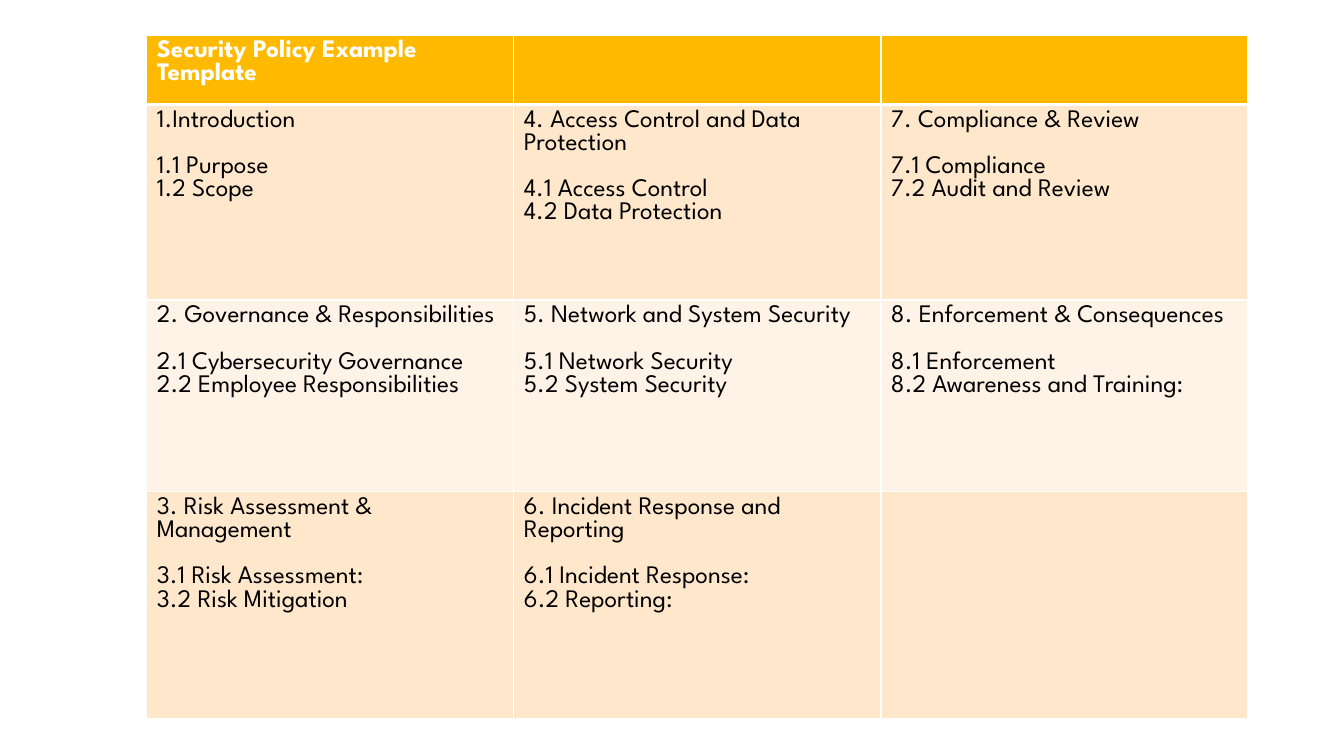
from dataclasses import dataclass

from lxml.etree import SubElement
from pptx import Presentation
from pptx.dml.color import RGBColor
from pptx.oxml.ns import qn
from pptx.util import Cm, Pt


@dataclass(frozen=True)
class Theme:
    font: str = "League Spartan"
    text_size: float = 18
    section_gap: float = 16.5
    thin_border: float = 1
    header_border: float = 3
    white: str = "FFFFFF"
    black: str = "000000"
    header_fill: str = "FFBA00"
    band_fills: tuple = ("FFE7CC", "FFF3E7")


TITLE = "Security Policy Example Template"
SECTIONS = [
    ("1.Introduction", "1.1 Purpose", "1.2 Scope"),
    ("2. Governance & Responsibilities", "2.1 Cybersecurity Governance",
     "2.2 Employee Responsibilities"),
    ("3. Risk Assessment & Management", "3.1 Risk Assessment:", "3.2 Risk Mitigation"),
    ("4. Access Control and Data Protection", "4.1 Access Control", "4.2 Data Protection"),
    ("5. Network and System Security", "5.1 Network Security", "5.2 System Security"),
    ("6. Incident Response and Reporting", "6.1 Incident Response:", "6.2 Reporting:"),
    ("7. Compliance & Review", "7.1 Compliance", "7.2 Audit and Review"),
    ("8. Enforcement & Consequences", "8.1 Enforcement", "8.2 Awareness and Training:"),
]
COLUMN_COUNT = 3
COLUMN_WIDTH = 9.25
ROW_HEIGHTS = (1.75, 4.93, 4.83, 5.72)


class PolicySlide:
    def __init__(self, presentation, theme):
        self.theme = theme
        self.slide = presentation.slides.add_slide(presentation.slide_layouts[6])

    def add_table(self, left, top, column_count, column_width, row_heights):
        table = self.slide.shapes.add_table(
            len(row_heights), column_count, Cm(left), Cm(top),
            Cm(column_width * column_count), Cm(sum(row_heights))).table
        for column in table.columns:
            column.width = Cm(column_width)
        for row, height in zip(table.rows, row_heights):
            row.height = Cm(height)
        return table

    def style_cell(self, cell, row_index):
        theme = self.theme
        top = theme.header_border if row_index == 1 else theme.thin_border
        bottom = theme.header_border if row_index == 0 else theme.thin_border
        self.add_borders(cell, L=theme.thin_border, R=theme.thin_border, T=top, B=bottom)
        cell.fill.solid()
        fill = theme.band_fills[(row_index - 1) % 2] if row_index else theme.header_fill
        cell.fill.fore_color.rgb = RGBColor.from_string(fill)

    def add_borders(self, cell, **widths):
        """Draw white cell borders; each keyword is a side (L, R, T, B) in points."""
        properties = cell._tc.get_or_add_tcPr()
        for side, width in widths.items():
            line = SubElement(properties, qn(f"a:ln{side}"), w=str(Pt(width)))
            fill = SubElement(line, qn("a:solidFill"))
            SubElement(fill, qn("a:srgbClr"), val=self.theme.white)

    def write_cell(self, cell, lines, color, bold=False):
        """Write one paragraph per line, with a gap after a heading that has items."""
        cell.text = "\n".join(lines)
        paragraphs = cell.text_frame.paragraphs
        for paragraph in paragraphs:
            paragraph.font.name = self.theme.font
            paragraph.font.size = Pt(self.theme.text_size)
            paragraph.font.bold = bold
            paragraph.font.color.rgb = RGBColor.from_string(color)
        if len(lines) > 1:
            paragraphs[0].space_after = Pt(self.theme.section_gap)


def main():
    presentation = Presentation()
    presentation.slide_width = Cm(33.87)
    presentation.slide_height = Cm(19.05)
    theme = Theme()
    policy = PolicySlide(presentation, theme)

    table = policy.add_table(3.7, 0.88, COLUMN_COUNT, COLUMN_WIDTH, ROW_HEIGHTS)
    for row_index, row in enumerate(table.rows):
        for cell in row.cells:
            policy.style_cell(cell, row_index)

    policy.write_cell(table.cell(0, 0), [TITLE], theme.white, bold=True)
    sections_per_column = len(ROW_HEIGHTS) - 1
    for index, section in enumerate(SECTIONS):
        column, row = divmod(index, sections_per_column)
        policy.write_cell(table.cell(row + 1, column), section, theme.black)

    presentation.save("out.pptx")


if __name__ == "__main__":
    main()
